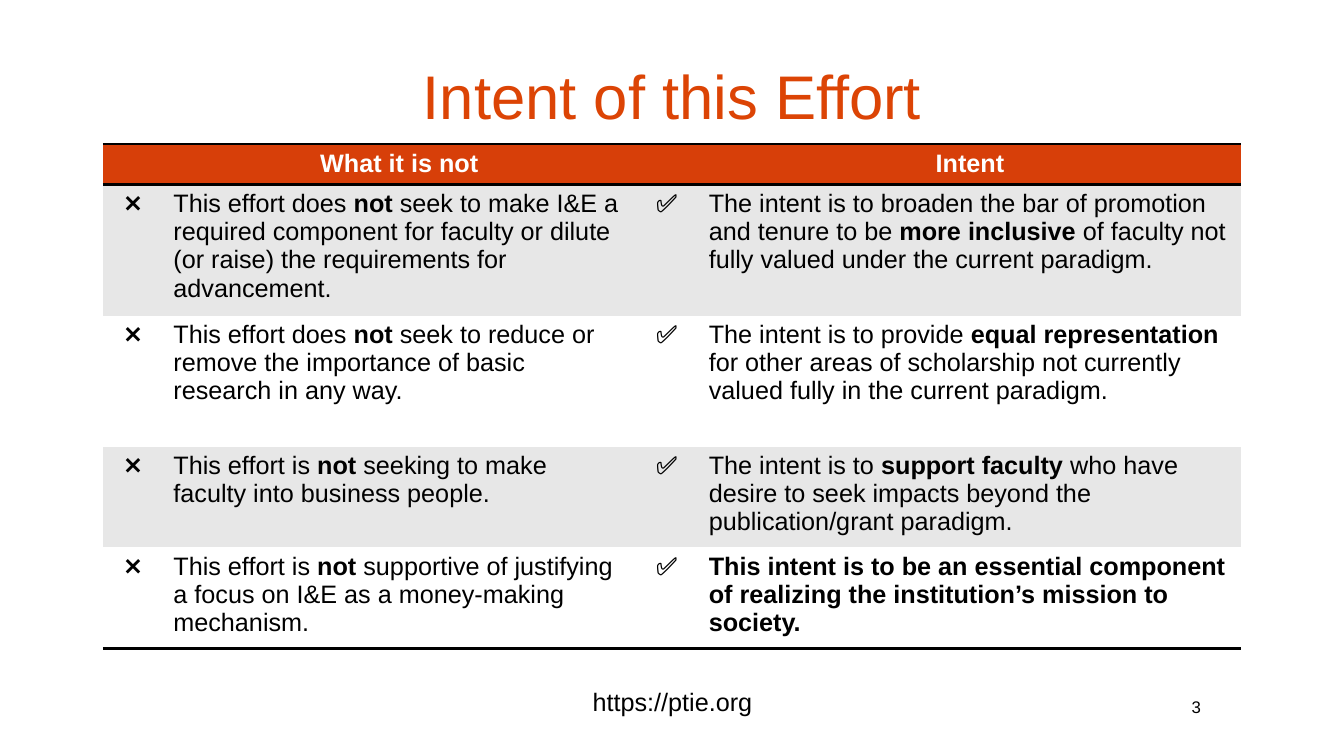
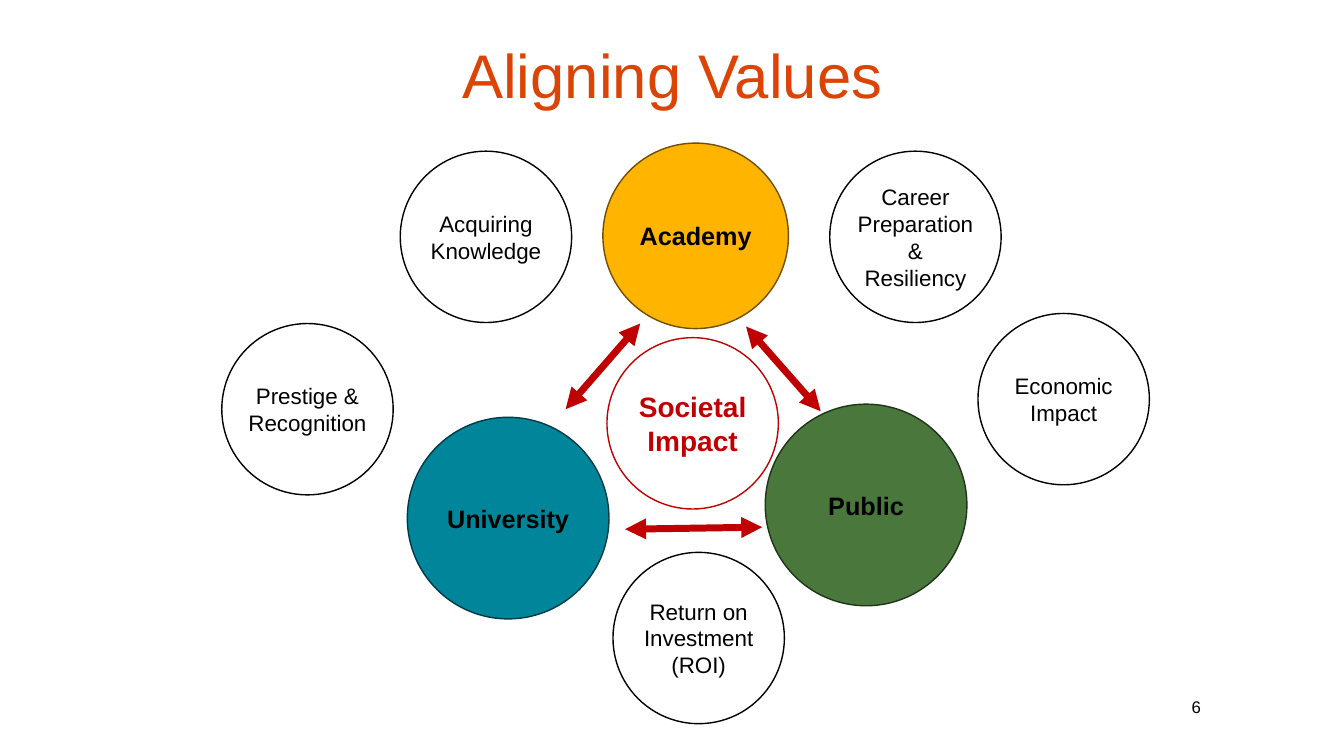
from dataclasses import dataclass

from lxml.etree import SubElement
from pptx import Presentation
from pptx.dml.color import RGBColor
from pptx.enum.shapes import MSO_CONNECTOR as Connector, MSO_SHAPE as Preset
from pptx.enum.text import MSO_ANCHOR as Anchor, PP_ALIGN as Align
from pptx.oxml import parse_xml
from pptx.oxml.ns import nsdecls, qn
from pptx.util import Inches, Pt


@dataclass(frozen=True)
class Theme:
    font: str = "Arial"
    title: str = "DC4405"
    header: str = "D73F09"
    band: str = "E7E7E7"
    white: str = "FFFFFF"
    black: str = "000000"
    accent: str = "C00000"
    gold: str = "FFB500"
    gold_line: str = "704F00"
    teal: str = "00859B"
    teal_line: str = "003A44"
    green: str = "4A773C"
    green_line: str = "20341A"
    title_size: int = 44
    center_size: int = 20
    body_size: int = 18
    value_size: int = 16
    number_size: int = 12


THEME = Theme()
NO_TABLE_STYLE = "{2D5ABB26-0587-4C30-8999-92F81FD0307C}"

COLUMN_WIDTHS = (0.6, 4.68, 0.63, 5.38)
ROW_HEIGHTS = (0.4, 1.3, 1.3, 1, 1)
HEADER = ("", "What it is not", "", "Intent")
STATEMENTS = (
    ("This effort does **not** seek to make I&E a required component for faculty "
     "or dilute (or raise) the requirements for advancement.",
     "The intent is to broaden the bar of promotion and tenure to be "
     "**more inclusive **of faculty not fully valued under the current paradigm."),
    ("This effort does **not** seek to reduce or remove the importance of basic "
     "research in any way.",
     "The intent is to provide **equal representation** for other areas of "
     "scholarship not currently valued fully in the current paradigm."),
    ("This effort is **not** seeking to make faculty into business people.",
     "The intent is to **support faculty **who have desire to seek impacts beyond "
     "the publication/grant paradigm."),
    ("This effort is **not** supportive of justifying a focus on I&E as a "
     "money-making mechanism.",
     "**This intent is to be an essential component of realizing the "
     "institution’s mission to society.**"),
)

PARTNERS = (
    ("Academy", 5.98, 1.42, 1.84, THEME.gold, THEME.gold_line),
    ("University", 4.04, 4.14, 2, THEME.teal, THEME.teal_line),
    ("Public", 7.59, 4.01, 2, THEME.green, THEME.green_line),
)
VALUE_DIAMETER = 1.7
VALUES = (
    ("Acquiring Knowledge", 3.97, 1.5),
    ("Prestige & Recognition", 2.2, 3.21),
    ("Economic Impact", 9.7, 3.11),
    ("Career Preparation & Resiliency", 8.23, 1.5),
    ("Return on Investment (ROI)", 6.08, 5.48),
)
ARROWS = (
    ((5.61, 4.06), (6.35, 3.21)),
    ((6.2, 5.25), (7.56, 5.23)),
    ((8.14, 4.08), (7.4, 3.24)),
)


def write_text(frame, text, size=THEME.body_size, color=THEME.black, bold=False,
               align=Align.LEFT, anchor=Anchor.TOP, spacing=None):
    frame.word_wrap = True
    frame.vertical_anchor = anchor
    paragraph = frame.paragraphs[0]
    paragraph.alignment = align
    paragraph.line_spacing = spacing
    for index, part in enumerate(text.split("**")):
        if part:
            run = paragraph.add_run()
            run.text = part
            run.font.name = THEME.font
            run.font.size = Pt(size)
            run.font.bold = bold or index % 2 == 1
            run.font.color.rgb = RGBColor.from_string(color)


def set_fill(fill, color):
    fill.solid()
    fill.fore_color.rgb = RGBColor.from_string(color)


def add_label(slide, text, left, top, width, height, **text_format):
    box = slide.shapes.add_textbox(*map(Inches, (left, top, width, height)))
    write_text(box.text_frame, text, **text_format)


def add_titled_slide(presentation, title, title_top, number):
    slide = presentation.slides.add_slide(presentation.slide_layouts[5])
    shape = slide.shapes.title
    shape.left, shape.top, shape.width, shape.height = map(
        Inches, (0.92, title_top, 11.5, 1.45))
    write_text(shape.text_frame, title, size=THEME.title_size, color=THEME.title,
               align=Align.CENTER, anchor=Anchor.MIDDLE, spacing=0.9)
    add_label(slide, str(number), 11.72, 6.81, 0.69, 0.4,
              size=THEME.number_size, anchor=Anchor.MIDDLE)
    return slide


def add_border(cell, side, width=2):
    border = parse_xml(
        f'<a:{side} {nsdecls("a")} w="{Pt(width)}"><a:solidFill>'
        f'<a:srgbClr val="{THEME.black}"/></a:solidFill></a:{side}>')
    properties = cell._tc.get_or_add_tcPr()
    properties.insert(len(properties) - 1, border)


def fill_row(table, row, texts, fill, borders=(), **text_format):
    for column, text in enumerate(texts):
        cell = table.cell(row, column)
        is_centered = row == 0 or column % 2 == 0
        write_text(cell.text_frame, text,
                   align=Align.CENTER if is_centered else Align.LEFT, **text_format)
        set_fill(cell.fill, fill)
        for side in borders:
            add_border(cell, side)


def add_intent_table(slide, left, top):
    frame = slide.shapes.add_table(
        len(ROW_HEIGHTS), len(COLUMN_WIDTHS), Inches(left), Inches(top),
        Inches(sum(COLUMN_WIDTHS)), Inches(sum(ROW_HEIGHTS)))
    table = frame.table
    table._tbl.tblPr.find(qn("a:tableStyleId")).text = NO_TABLE_STYLE
    table.horz_banding = False
    for column, width in zip(table.columns, COLUMN_WIDTHS):
        column.width = Inches(width)
    for row, height in zip(table.rows, ROW_HEIGHTS):
        row.height = Inches(height)
    fill_row(table, 0, HEADER, THEME.header, borders=("lnT", "lnB"),
             color=THEME.white, bold=True)
    for row, (denial, intent) in enumerate(STATEMENTS, start=1):
        fill_row(table, row, ("❌", denial, "✅", intent),
                 THEME.band if row % 2 else THEME.white,
                 borders=("lnB",) if row == len(STATEMENTS) else ())


def add_circle(slide, text, left, top, diameter, fill, line, **text_format):
    shape = slide.shapes.add_shape(
        Preset.OVAL, *map(Inches, (left, top, diameter, diameter)))
    shape.shadow.inherit = False
    set_fill(shape.fill, fill)
    set_fill(shape.line.fill, line)
    shape.line.width = Pt(1)
    shape.text_frame.margin_left = shape.text_frame.margin_right = 0
    write_text(shape.text_frame, text, align=Align.CENTER, anchor=Anchor.MIDDLE,
               **text_format)


def add_double_arrow(slide, start, end):
    connector = slide.shapes.add_connector(
        Connector.STRAIGHT, *map(Inches, start + end))
    set_fill(connector.line.fill, THEME.accent)
    connector.line.width = Pt(5)
    properties = connector._element.spPr
    outline = properties.find(qn("a:ln"))
    for tip in ("a:headEnd", "a:tailEnd"):
        SubElement(outline, qn(tip), type="triangle")
    SubElement(properties, qn("a:effectLst"))


def build_intent_slide(presentation):
    slide = add_titled_slide(presentation, "Intent of this Effort", 0.26, 3)
    add_intent_table(slide, 1.02, 1.43)
    add_label(slide, "https://ptie.org", 4.39, 6.76, 4.56, 0.4, align=Align.CENTER)


def build_values_slide(presentation):
    slide = add_titled_slide(presentation, "Aligning Values", 0.05, 6)
    for text, left, top, diameter, fill, line in PARTNERS:
        add_circle(slide, text, left, top, diameter, fill, line, bold=True)
    for start, end in ARROWS:
        add_double_arrow(slide, start, end)
    for text, left, top in VALUES:
        add_circle(slide, text, left, top, VALUE_DIAMETER, THEME.white, THEME.black,
                   size=THEME.value_size)
    add_circle(slide, "Societal Impact", 6.02, 3.35, VALUE_DIAMETER, THEME.white,
               THEME.accent, size=THEME.center_size, color=THEME.accent, bold=True)


def main():
    presentation = Presentation()
    presentation.slide_width = Inches(13.33)
    presentation.slide_height = Inches(7.5)
    build_intent_slide(presentation)
    build_values_slide(presentation)
    presentation.save("out.pptx")


if __name__ == "__main__":
    main()
